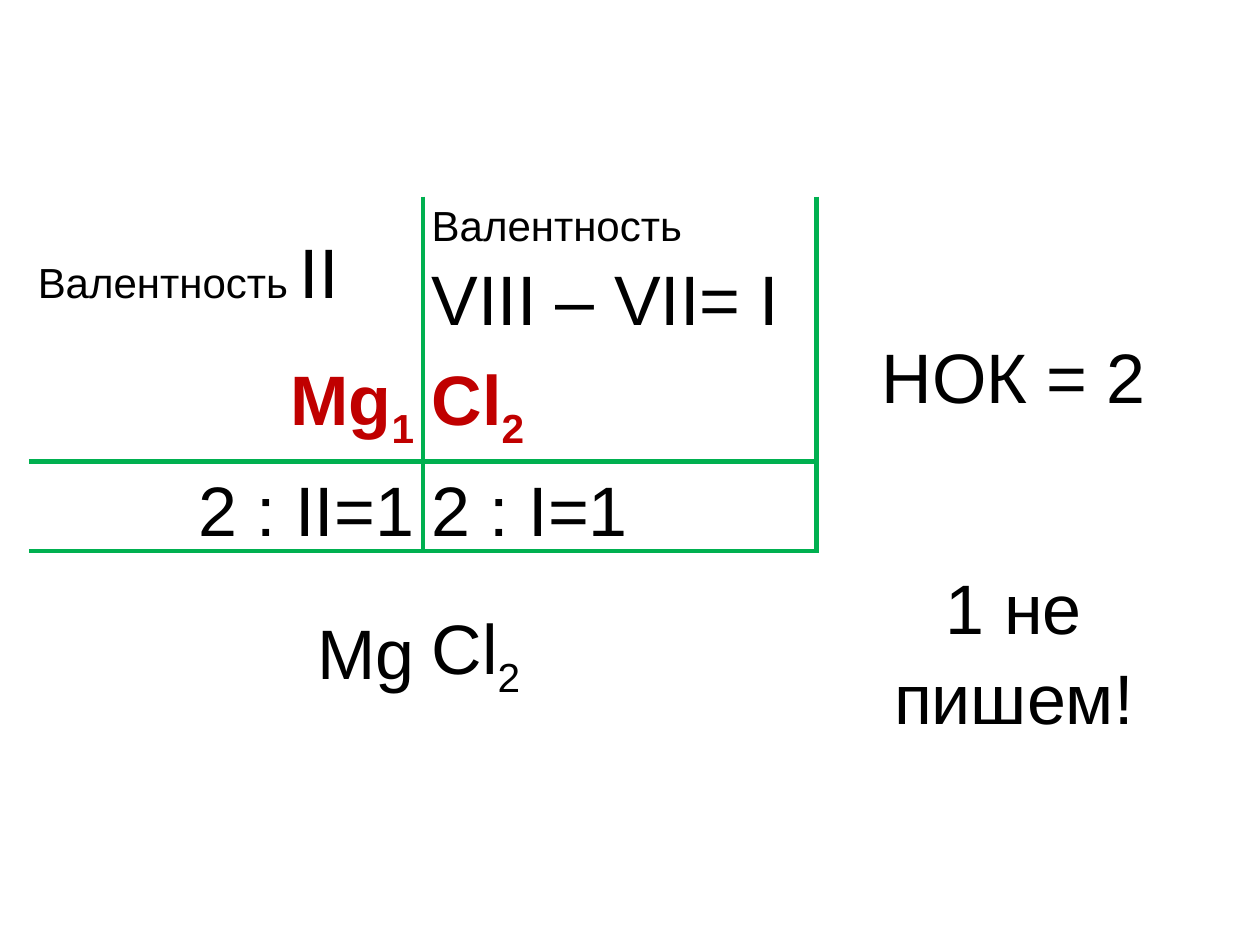
from dataclasses import dataclass

from lxml import etree
from pptx import Presentation
from pptx import util as u
from pptx.dml.color import RGBColor
from pptx.enum import text
from pptx.oxml.ns import qn


@dataclass(frozen=True)
class Theme:
    font: str = "Arial"
    ink: str = "000000"
    accent: str = "C00000"
    rule: str = "00B050"
    rule_width: float = 3
    label: int = 24
    formula: int = 40
    line_spacing: float = 1.15


THEME = Theme()
NO_STYLE = "{2D5ABB26-0587-4C30-8999-92F81FD0307C}"
ROW_HEIGHTS = (1.14, 0.96, 0.71, 1.56)
CROSS_ROWS, CROSS_COLUMNS = 3, 2  # extent of the green cross
LEFT, CENTER, RIGHT = text.PP_ALIGN.LEFT, text.PP_ALIGN.CENTER, text.PP_ALIGN.RIGHT
COLUMN_ALIGN = (RIGHT, LEFT, CENTER)

# Each cell is a list of lines, each line a list of (words, role) pieces.
VALENCE_STEPS = [
    [[[("Валентность ", "label"), ("II", "formula")]],
     [[("Валентность", "label")], [("VIII – VII= I", "formula")]],
     [[("НОК = 2", "formula")]]],
    [[[("Mg", "element"), ("1", "element index")]],
     [[("Cl", "element"), ("2", "element index")]],
     None],
    [[[("2 : II=1", "formula")]], [[("2 : I=1", "formula")]], None],
    [[[("Mg", "formula")]],
     [[("Cl", "formula"), ("2", "index")]],
     [[("1 не пишем!", "formula")]]],
]


def write_piece(line, words, role):
    piece = line.add_run()
    piece.text = words
    font = piece.font
    font.name = THEME.font
    font.size = u.Pt(THEME.label if role == "label" else THEME.formula)
    font.bold = role.startswith("element")
    font.color.rgb = RGBColor.from_string(THEME.accent if font.bold else THEME.ink)
    if role.endswith("index"):
        font._element.set("baseline", "-25000")


def write_cell(cell, lines, align):
    cell.vertical_anchor = text.MSO_ANCHOR.MIDDLE
    cell.margin_left = cell.margin_right = u.Inches(0.07)
    cell.margin_top = cell.margin_bottom = 0
    frame = cell.text_frame
    for number, pieces in enumerate(lines):
        line = frame.add_paragraph() if number else frame.paragraphs[0]
        line.alignment = align
        line.line_spacing = THEME.line_spacing
        for words, role in pieces:
            write_piece(line, words, role)


def draw_cross(cell, row, column):
    """Draw the sides of the cell that lie on the green cross."""
    beside = row < CROSS_ROWS
    along = column < CROSS_COLUMNS
    sides = {
        "a:lnL": beside and column == 1,
        "a:lnR": beside and column == 0,
        "a:lnT": along and row == 2,
        "a:lnB": along and row == 1,
    }
    properties = cell._tc.get_or_add_tcPr()
    for side, on_cross in sides.items():
        if on_cross:
            edge = etree.SubElement(properties, qn(side), w=str(u.Pt(THEME.rule_width)))
            fill = etree.SubElement(edge, qn("a:solidFill"))
            etree.SubElement(fill, qn("a:srgbClr"), val=THEME.rule)


def add_valence_table(slide, left, top, width):
    frame = slide.shapes.add_table(
        len(ROW_HEIGHTS), len(COLUMN_ALIGN), left, top, width, u.Inches(sum(ROW_HEIGHTS)))
    table = frame.table
    table.first_row = table.horz_banding = False
    table._tbl.tblPr.find(qn("a:tableStyleId")).text = NO_STYLE
    for row, height in zip(table.rows, ROW_HEIGHTS):
        row.height = u.Inches(height)
    table.cell(0, 2).merge(table.cell(2, 2))

    for row, steps in enumerate(VALENCE_STEPS):
        for column, lines in enumerate(steps):
            cell = table.cell(row, column)
            if lines:
                align = LEFT if (row, column) == (0, 0) else COLUMN_ALIGN[column]
                write_cell(cell, lines, align)
            draw_cross(cell, row, column)
            cell.fill.background()


def main():
    deck = Presentation()
    deck.slide_width, deck.slide_height = u.Inches(10), u.Inches(7.5)
    slide = deck.slides.add_slide(deck.slide_layouts[6])
    add_valence_table(slide, u.Inches(0.23), u.Inches(1.56), u.Inches(9.38))
    deck.save("out.pptx")


if __name__ == "__main__":
    main()
